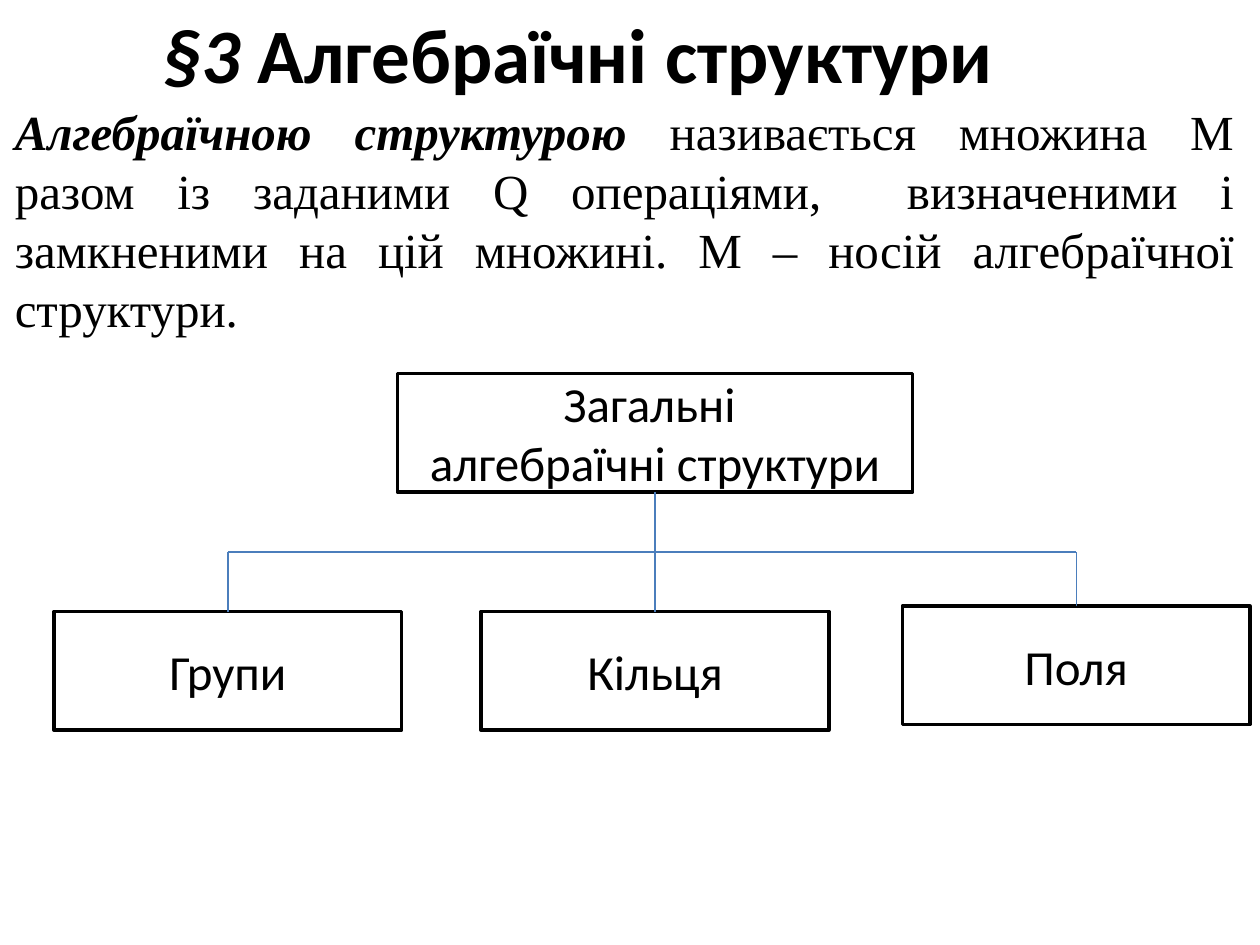
import pptx
import pptx.util
import pptx.dml.color
import pptx.enum.shapes
import pptx.enum.text
import pptx.oxml.ns
import lxml.etree

Cm, Pt = pptx.util.Cm, pptx.util.Pt
ALIGN = pptx.enum.text.PP_ALIGN
MIDDLE = pptx.enum.text.MSO_ANCHOR.MIDDLE
BLACK = pptx.dml.color.RGBColor(0x00, 0x00, 0x00)
BLUE = pptx.dml.color.RGBColor(0x4B, 0x7E, 0xBC)


def add_span(para, text, font="Calibri", size=28, bold=False, italic=False, align=ALIGN.CENTER):
    para.alignment = align
    span = para.add_run()
    span.text = text
    span.font.name = font
    span.font.size = Pt(size)
    span.font.bold = bold
    span.font.italic = italic
    span.font.color.rgb = BLACK


deck = pptx.Presentation()
deck.slide_width, deck.slide_height = Cm(25.4), Cm(19.05)
page = deck.slides.add_slide(deck.slide_layouts[5])

# Title
title = page.shapes.title
title.left, title.top, title.width, title.height = Cm(0.03), Cm(0), Cm(23.27), Cm(2.13)
title.text_frame.vertical_anchor = MIDDLE
para = title.text_frame.paragraphs[0]
add_span(para, "§3 ", size=44, bold=True, italic=True)
add_span(para, "Алгебраїчні структури", size=44, bold=True)

# Definition
definition = page.shapes.add_textbox(Cm(0.05), Cm(1.93), Cm(25.07), Cm(5.05))
definition.text_frame.word_wrap = True
para = definition.text_frame.paragraphs[0]
add_span(para, "Алгебраїчною структурою ", font="Times New Roman",
         bold=True, italic=True, align=ALIGN.JUSTIFY)
add_span(para, "називається множина M разом із заданими Q операціями,  визначеними і "
         "замкненими на цій множині. M – носій алгебраїчної структури.",
         font="Times New Roman", align=ALIGN.JUSTIFY)

# Boxes: the general structure, then its three kinds
BOX_HEIGHT = 2.39
boxes = []
for lines, left, top, width in [
    (["Загальні ", "алгебраїчні структури"], 8.01, 7.53, 10.39),
    (["Групи"], 1.09, 12.33, 7.01),
    (["Кільця"], 9.7, 12.33, 7.01),
    (["Поля"], 18.19, 12.22, 7.01),
]:
    box = page.shapes.add_shape(pptx.enum.shapes.MSO_SHAPE.RECTANGLE,
                                Cm(left), Cm(top), Cm(width), Cm(BOX_HEIGHT))
    box.shadow.inherit = False
    box.fill.background()
    box.line.color.rgb = BLACK
    box.line.width = Pt(2)
    frame = box.text_frame
    frame.word_wrap = True
    frame.vertical_anchor = MIDDLE
    for number, line in enumerate(lines):
        para = frame.add_paragraph() if number else frame.paragraphs[0]
        add_span(para, line)
    boxes.append(box)

# Tree lines: trunk, crossbar and outer branches
root, groups, rings, fields = boxes
root_x, groups_x, fields_x = (box.left + box.width // 2 for box in (root, groups, fields))
bar_y = Cm(11.13)
for start_x, start_y, end_x, end_y in [
    (root_x, root.top + root.height, root_x, rings.top),
    (groups_x, bar_y, fields_x, bar_y),
    (fields_x, fields.top, fields_x, bar_y),
    (groups_x, groups.top, groups_x, bar_y),
]:
    branch = page.shapes.add_connector(pptx.enum.shapes.MSO_CONNECTOR.STRAIGHT,
                                       start_x, start_y, end_x, end_y)
    branch.line.color.rgb = BLUE
    branch.line.width = Pt(0.75)
    lxml.etree.SubElement(branch._element.spPr, pptx.oxml.ns.qn("a:effectLst"))

deck.save("out.pptx")
